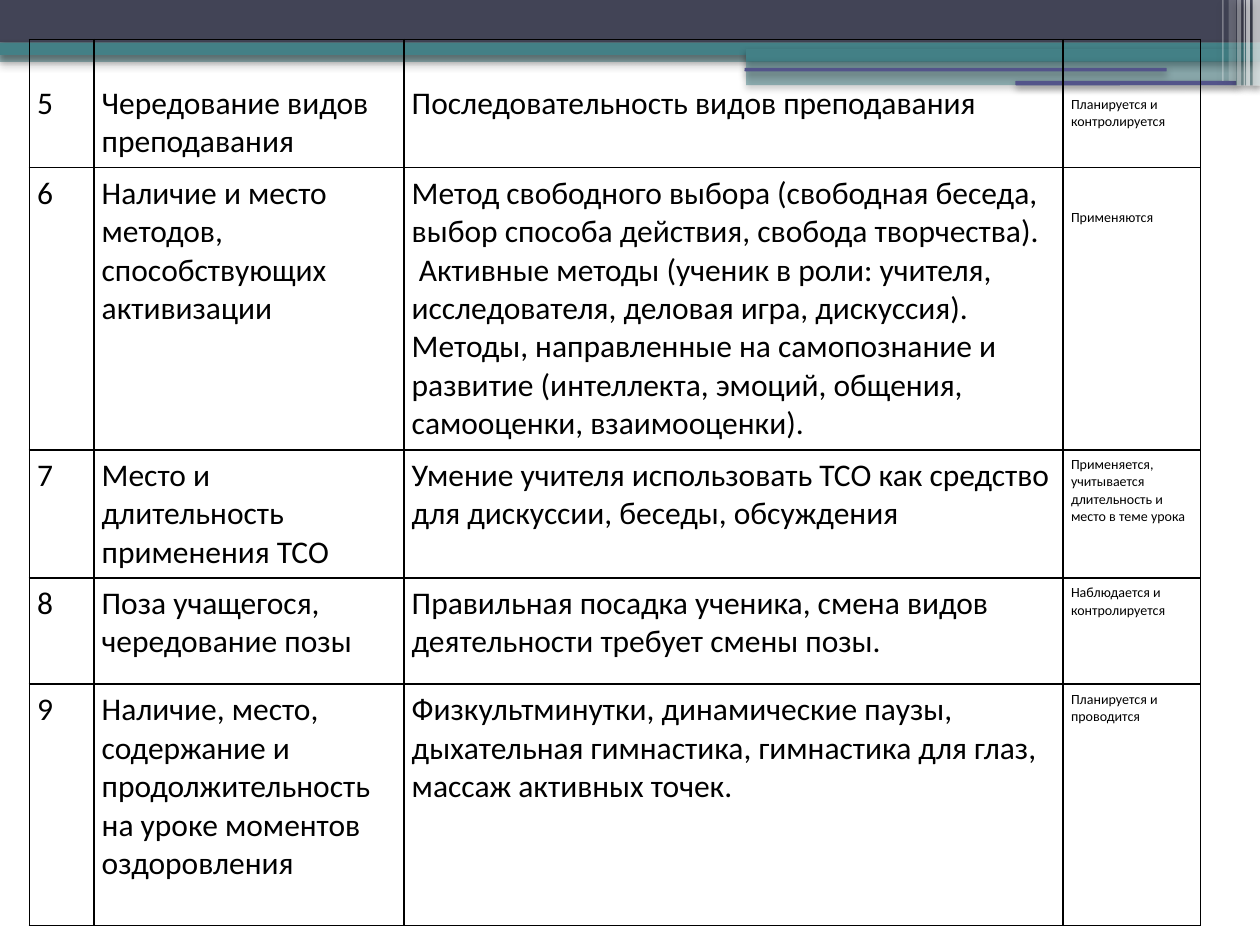
from dataclasses import dataclass
from typing import NamedTuple

from lxml import etree
from pptx import Presentation
from pptx import util as u
from pptx.dml.color import RGBColor
from pptx.enum import shapes, text
from pptx.oxml import ns


@dataclass(frozen=True)
class Theme:
    navy: str = "424456"
    teal: str = "438086"
    violet: str = "53548A"
    white: str = "FFFFFF"
    ink: str = "000000"
    font: str = "Calibri"
    body_size: float = 18
    note_size: float = 8
    border_width: float = 0.96


THEME = Theme()


class Band(NamedTuple):
    """A decorative bar; lengths in cm, opacity in percent."""
    left: float
    top: float
    width: float
    height: float
    color: str
    opacity: int = 100
    rounded: bool = False


class Criterion(NamedTuple):
    """A table row; lengths in cm, drops push the text down from the row top."""
    number: str
    aspect: str
    content: str
    note: str
    height: float
    body_drop: float = 0
    note_drop: float = 0


SLIDE_WIDTH, SLIDE_HEIGHT = 25.4, 19.05
PANEL_LEFT = 15.04
PANEL_WIDTH = SLIDE_WIDTH - PANEL_LEFT

HEADER_BANDS = [
    Band(0, 1.02, SLIDE_WIDTH, 0.23, THEME.teal, 50),
    Band(0, 0, SLIDE_WIDTH, 0.86, THEME.navy),
    Band(0, 0.86, SLIDE_WIDTH, 0.25, THEME.teal),
    Band(PANEL_LEFT, 0.99, PANEL_WIDTH, 0.25, THEME.teal),
    Band(PANEL_LEFT, 1.22, PANEL_WIDTH, 0.5, THEME.teal, 50),
    Band(15.01, 1.37, 8.51, 0.07, THEME.violet, rounded=True),
    Band(20.47, 1.63, 4.45, 0.09, THEME.violet, rounded=True),
]
STRIPES = [
    Band(left, 0, width, height, THEME.white, opacity)
    for left, width, height, opacity in [
        (25.25, 0.15, 1.73, 66), (25.12, 0.08, 1.73, 66), (25.07, 0.03, 1.73, 60),
        (24.94, 0.08, 1.73, 40), (24.77, 0.15, 1.63, 20), (24.64, 0.03, 1.63, 31),
    ]
]

TABLE_LEFT, TABLE_TOP = 0.59, 0.8
COLUMN_WIDTHS = [1.3, 6.25, 13.29, 2.77]
MARGIN_X, MARGIN_Y = 0.16, 0.13

CRITERIA = [
    Criterion("5", "Чередование видов преподавания",
              "Последовательность видов преподавания",
              "Планируется и контролируется", 2.56, 0.77, 1.01),
    Criterion("6", "Наличие и место методов, способствующих активизации",
              "Метод свободного выбора (свободная беседа, выбор способа действия, "
              "свобода творчества).\n"
              " Активные методы (ученик в роли: учителя, исследователя, деловая игра, "
              "дискуссия). Методы, направленные на самопознание и развитие "
              "(интеллекта, эмоций, общения, самооценки, взаимооценки).",
              "Применяются", 5.68, note_drop=0.71),
    Criterion("7", "Место и длительность применения ТСО",
              "Умение учителя использовать ТСО как средство для дискуссии, "
              "беседы, обсуждения",
              "Применяется, учитывается длительность и место в теме урока", 2.58),
    Criterion("8", "Поза учащегося, чередование позы",
              "Правильная посадка ученика, смена видов деятельности требует смены позы.",
              "Наблюдается и контролируется", 2.14),
    Criterion("9", "Наличие, место, содержание и продолжительность на уроке "
              "моментов оздоровления",
              "Физкультминутки, динамические паузы, дыхательная гимнастика, "
              "гимнастика для глаз, массаж активных точек.",
              "Планируется и проводится", 4.86),
]


def add_color(parent, color: str, opacity: int = 100) -> None:
    node = etree.SubElement(parent, ns.qn("a:srgbClr"), val=color)
    if opacity < 100:
        etree.SubElement(node, ns.qn("a:alpha"), val=str(opacity * 1000))


def add_shadow(shape) -> None:
    shape.shadow.inherit = False
    effects = shape._element.spPr.find(ns.qn("a:effectLst"))
    shadow = etree.SubElement(effects, ns.qn("a:outerShdw"), blurRad=str(u.Pt(4.1)),
                              dist=str(u.Pt(2)), dir="5400000", rotWithShape="0")
    add_color(shadow, THEME.ink, 40)


def draw_band(slide, band: Band) -> None:
    kind = shapes.MSO_SHAPE.ROUNDED_RECTANGLE if band.rounded else shapes.MSO_SHAPE.RECTANGLE
    bar = slide.shapes.add_shape(kind, u.Cm(band.left), u.Cm(band.top),
                                 u.Cm(band.width), u.Cm(band.height))
    bar.line.fill.background()
    bar.fill.solid()
    bar.fill.fore_color.rgb = RGBColor.from_string(band.color)
    if band.opacity < 100:
        color = bar._element.spPr.find(ns.qn("a:solidFill"))[0]
        etree.SubElement(color, ns.qn("a:alpha"), val=str(band.opacity * 1000))
    add_shadow(bar)


def write(frame, content: str, *, size: float, color: str = THEME.ink,
          font: str = THEME.font) -> None:
    """Fill a text frame, one paragraph for each line of content."""
    frame.word_wrap = True
    frame.text = content
    for paragraph in frame.paragraphs:
        paragraph.alignment = text.PP_ALIGN.LEFT
        for run in paragraph.runs:
            run.font.size = u.Pt(size)
            run.font.name = font
            run.font.color.rgb = RGBColor.from_string(color)


def add_borders(cell) -> None:
    properties = cell._tc.get_or_add_tcPr()
    for position, side in enumerate(("a:lnL", "a:lnR", "a:lnT", "a:lnB")):
        line = etree.Element(ns.qn(side), w=str(u.Pt(THEME.border_width)))
        add_color(etree.SubElement(line, ns.qn("a:solidFill")), THEME.ink)
        properties.insert(position, line)


def fill_cell(cell, content: str, size: float, drop: float) -> None:
    cell.margin_left = cell.margin_right = u.Cm(MARGIN_X)
    cell.margin_top = u.Cm(MARGIN_Y + drop)
    cell.margin_bottom = u.Cm(MARGIN_Y)
    cell.vertical_anchor = text.MSO_ANCHOR.TOP
    cell.fill.background()
    add_borders(cell)
    write(cell.text_frame, content, size=size)


def draw_criteria(slide, criteria: list[Criterion]) -> None:
    table = slide.shapes.add_table(
        len(criteria), len(COLUMN_WIDTHS), u.Cm(TABLE_LEFT), u.Cm(TABLE_TOP),
        u.Cm(sum(COLUMN_WIDTHS)), u.Cm(sum(c.height for c in criteria))).table
    table.first_row = table.horz_banding = False
    for column, width in zip(table.columns, COLUMN_WIDTHS):
        column.width = u.Cm(width)
    for row, criterion in zip(table.rows, criteria):
        row.height = u.Cm(criterion.height)
        *body_cells, note_cell = row.cells
        for cell, content in zip(body_cells, criterion[:3]):
            fill_cell(cell, content, THEME.body_size, criterion.body_drop)
        fill_cell(note_cell, criterion.note, THEME.note_size, criterion.note_drop)


def main() -> None:
    deck = Presentation()
    deck.slide_width, deck.slide_height = u.Cm(SLIDE_WIDTH), u.Cm(SLIDE_HEIGHT)
    slide = deck.slides.add_slide(deck.slide_layouts[6])
    for band in HEADER_BANDS + STRIPES:
        draw_band(slide, band)
    draw_criteria(slide, CRITERIA)
    deck.save("out.pptx")


if __name__ == "__main__":
    main()
